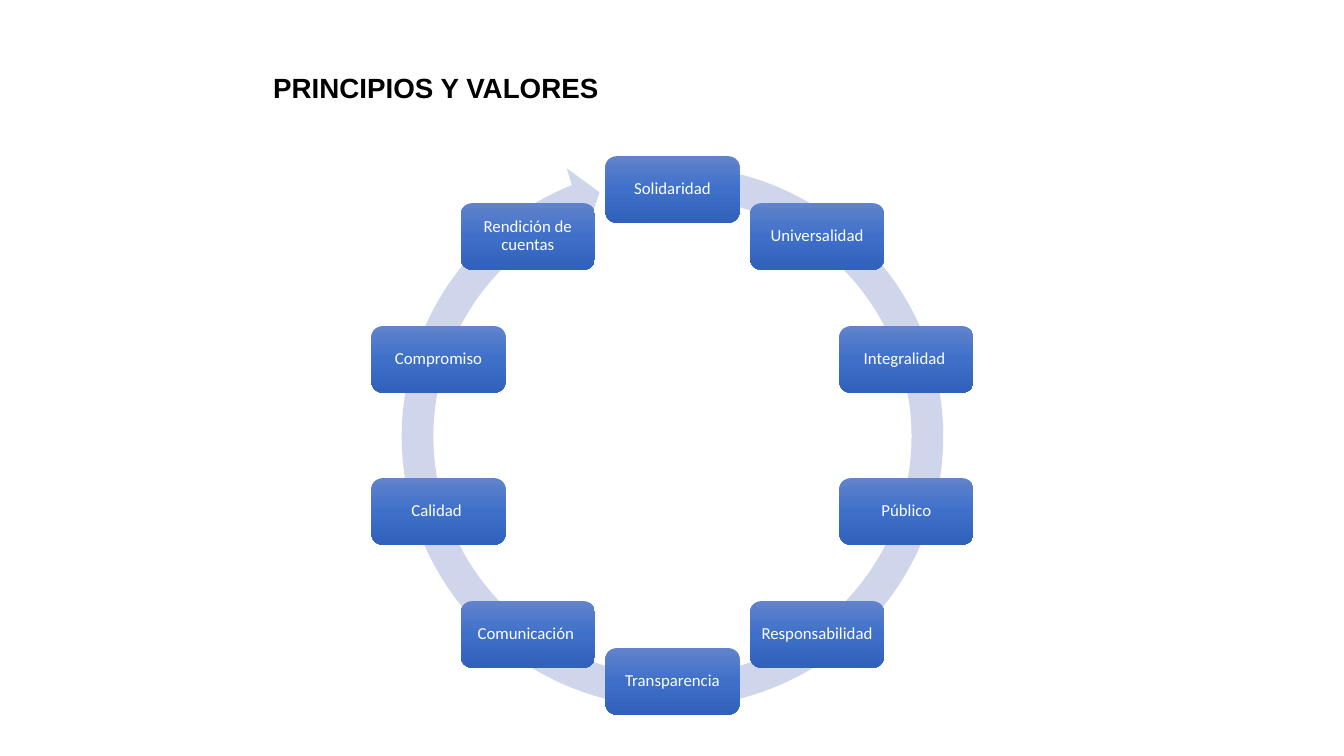
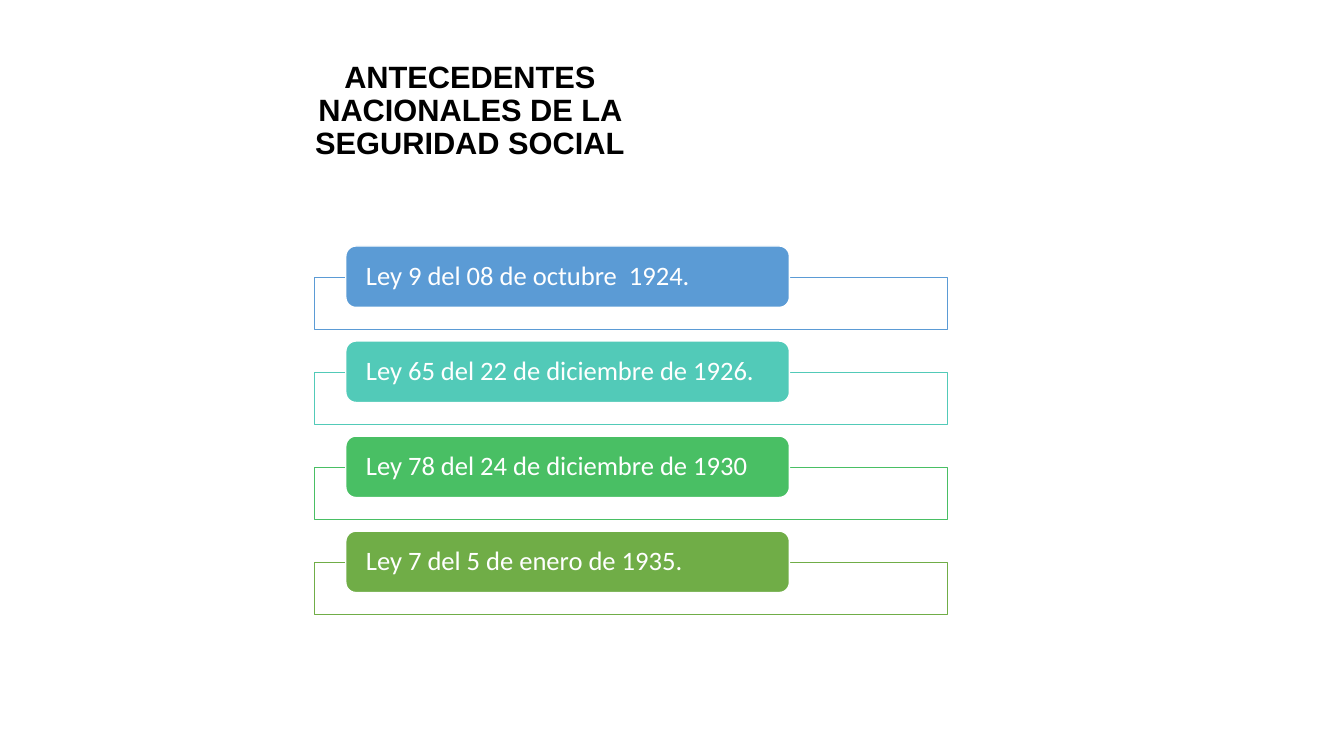
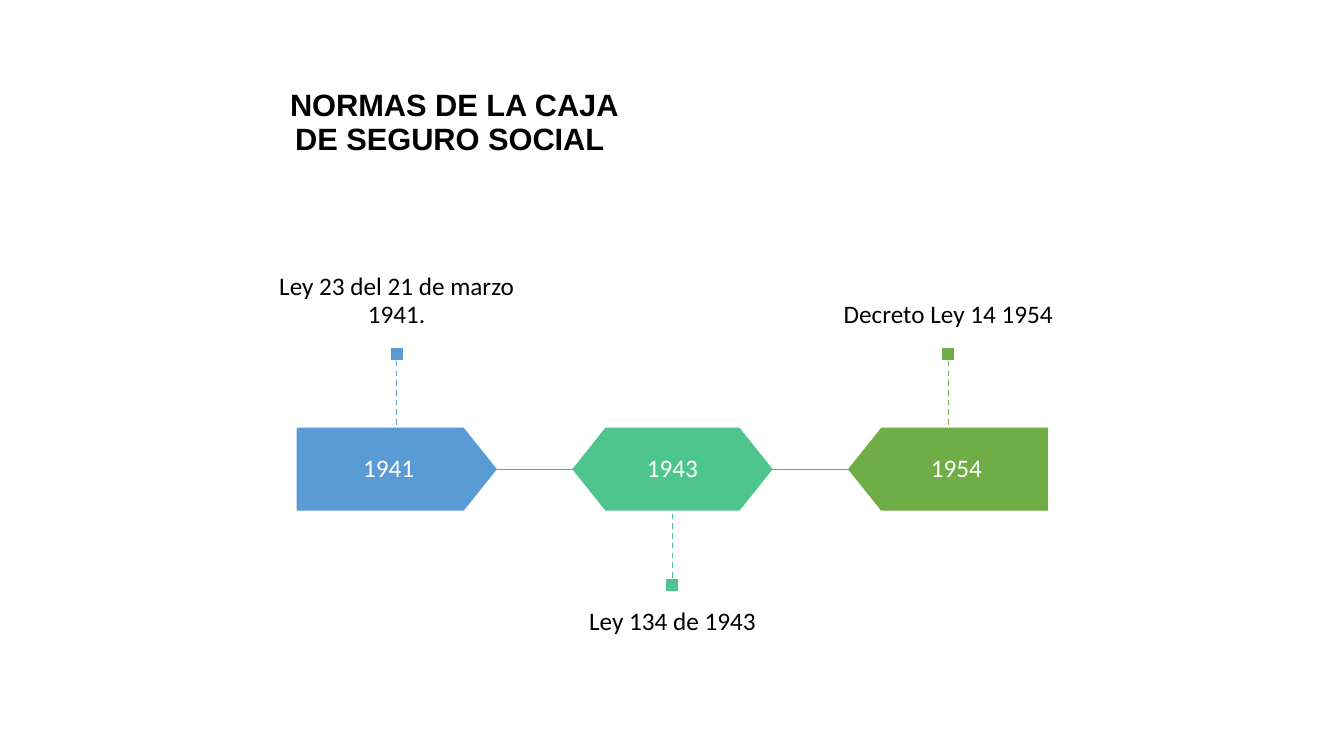
from math import cos, pi, sin

from lxml.etree import SubElement
from pptx import Presentation
from pptx.dml.color import RGBColor
from pptx.enum.dml import MSO_LINE
from pptx.enum.shapes import MSO_CONNECTOR, MSO_SHAPE
from pptx.enum.text import MSO_ANCHOR, MSO_AUTO_SIZE, PP_ALIGN
from pptx.oxml.ns import qn
from pptx.util import Inches, Pt


class Theme:
    title_font, body_font = "Arial", "Calibri"
    black, white = "000000", "FFFFFF"
    ring = "CFD5EA"
    node_gradient = {0: "6183CB", 50000: "3E70CA", 100000: "3062BB"}
    blue, teal, mint = "5B9BD5", "52CAB8", "4DC58D"
    green, olive = "49BF64", "70AD47"
    title_size, title_small = 22, 19.8
    node_size, law_size, event_size = 12, 19, 18
    line_spacing = 0.9


PRINCIPLES = [
    "Solidaridad", "Universalidad", "Integralidad ", "Público",
    "Responsabilidad", "Transparencia", "Comunicación ", "Calidad ",
    "Compromiso", "Rendición de cuentas",
]
LAWS = [
    ("Ley 9 del 08 de octubre  1924.", Theme.blue),
    ("Ley 65 del 22 de diciembre de 1926.", Theme.teal),
    ("Ley 78 del 24 de diciembre de 1930", Theme.green),
    ("Ley 7 del 5 de enero de 1935.", Theme.olive),
]
# year, law, colour, shape, law above the year, mirrored
EVENTS = [
    ("1941", "Ley 23 del 21 de marzo 1941.", Theme.blue,
     MSO_SHAPE.PENTAGON, True, False),
    ("1943", "Ley 134 de 1943", Theme.mint, MSO_SHAPE.HEXAGON, False, False),
    ("1954", "Decreto Ley 14 1954", Theme.olive,
     MSO_SHAPE.PENTAGON, True, True),
]


def set_all(target, values):
    for name, value in values.items():
        setattr(target, name, value)


def write(sp, text, size, color, font=Theme.body_font, bold=False,
          align=PP_ALIGN.CENTER, anchor=MSO_ANCHOR.MIDDLE,
          insets=(0.05, 0.05), space_after=0):
    """Fill a shape with one paragraph; insets are (sides, top and bottom)."""
    side, edge = map(Inches, insets)
    tf = sp.text_frame
    set_all(tf, {
        "text": text, "word_wrap": True, "auto_size": MSO_AUTO_SIZE.NONE,
        "vertical_anchor": anchor, "margin_left": side, "margin_right": side,
        "margin_top": edge, "margin_bottom": edge,
    })
    p = tf.paragraphs[0]
    set_all(p, {"alignment": align, "line_spacing": Theme.line_spacing,
                "space_before": Pt(0), "space_after": Pt(space_after)})
    r = p.runs[0]
    set_all(r.font, {"name": font, "size": Pt(size), "bold": bold})
    r.font.color.rgb = RGBColor.from_string(color)


def add_title_slide(prs, text, box, size=Theme.title_size, **style):
    s = prs.slides.add_slide(prs.slide_layouts[5])
    title = s.shapes.title
    set_all(title, dict(zip(("left", "top", "width", "height"),
                            map(Inches, box))))
    write(title, text, size, Theme.black, Theme.title_font, True,
          insets=(0.1, 0.05), **style)
    return s


def add_box(s, kind, box, fill, line=None, width=1):
    sp = s.shapes.add_shape(kind, *map(Inches, box))
    sp.shadow.inherit = False
    sp.fill.solid()
    sp.fill.fore_color.rgb = RGBColor.from_string(fill)
    if line:
        sp.line.color.rgb = RGBColor.from_string(line)
        sp.line.width = Pt(width)
    else:
        sp.line.fill.background()
    return sp


def shade(sp, stops):
    """Give a shape a top-to-bottom gradient."""
    sp.fill.gradient()
    sp.fill.gradient_angle = 270
    stop_list = sp._element.spPr.find(".//" + qn("a:gsLst"))
    for stop in list(stop_list):
        stop_list.remove(stop)
    for pos, color in stops.items():
        stop = SubElement(stop_list, qn("a:gs"), pos=str(pos))
        SubElement(stop, qn("a:srgbClr"), val=color)


def add_line(s, start, end, color, dash=None):
    line = s.shapes.add_connector(MSO_CONNECTOR.STRAIGHT,
                                  *map(Inches, (*start, *end)))
    line.line.color.rgb = RGBColor.from_string(color)
    line.line.width = Pt(1)
    if dash:
        line.line.dash_style = dash
    SubElement(line._element.spPr, qn("a:effectLst"))
    return line


def add_cycle(s, labels, center=(6.67, 4.32), radius=2.44):
    cx, cy = center
    w, h = 1.33, 0.66
    ring = add_box(s, MSO_SHAPE.CIRCULAR_ARROW, (3.81, 1.47, 5.72, 5.72),
                   Theme.ring)
    for i, value in enumerate((0.055, 3.307, 148.714, 167.491, 0.058)):
        ring.adjustments[i] = value
    for i, label in enumerate(labels):
        angle = 2 * pi * i / len(labels)
        x, y = cx + radius * sin(angle), cy - radius * cos(angle)
        node = add_box(s, MSO_SHAPE.ROUNDED_RECTANGLE,
                       (x - w / 2, y - h / 2, w, h), Theme.white)
        shade(node, Theme.node_gradient)
        write(node, label, Theme.node_size, Theme.white)


def add_law_list(s, laws, top=2.44, pitch=0.943):
    for i, (law, color) in enumerate(laws):
        y = top + i * pitch
        add_box(s, MSO_SHAPE.RECTANGLE, (3.12, y + 0.31, 6.28, 0.52),
                Theme.white, color)
        pill = add_box(s, MSO_SHAPE.ROUNDED_RECTANGLE, (3.43, y, 4.4, 0.61),
                       color, Theme.white)
        write(pill, law, Theme.law_size, Theme.white, align=PP_ALIGN.LEFT,
              insets=(0.17, 0))


def add_event(s, x, y, w, h, event):
    """Draw a year with its marker, dashed stem and law."""
    year, law, color, kind, above, mirrored = event
    cx, dot = x + w / 2, 0.14
    sp = add_box(s, kind, (x, y, w, h), color, color)
    sp.adjustments[0] = 0.4
    if mirrored:
        sp._element.spPr.find(qn("a:xfrm")).set("flipH", "1")
    write(sp, year, Theme.event_size, Theme.white, insets=(0.15, 0.15))

    if above:
        dot_y, stem_y, label_y, label_h = y - 0.81, y, y - 2.98, 2.16
        side, anchor = 2, MSO_ANCHOR.BOTTOM
    else:
        dot_y, stem_y, label_y, label_h = y + 1.48, y + h, y + 1.62, 1.6
        side, anchor = 0, MSO_ANCHOR.TOP
    marker = add_box(s, MSO_SHAPE.RECTANGLE, (cx - dot / 2, dot_y, dot, dot),
                     color, Theme.white, 1.5)
    stem = add_line(s, (cx, dot_y), (cx, stem_y), color, MSO_LINE.DASH)
    stem.begin_connect(marker, side)
    label = s.shapes.add_textbox(*map(Inches, (cx - 1.37, label_y,
                                               2.74, label_h)))
    write(label, law, Theme.event_size, Theme.black, anchor=anchor,
          insets=(0, 0.17))


def add_timeline(s, events, left=2.95, top=4.25, pitch=2.735):
    w, h = 1.97, 0.81
    for i, event in enumerate(events):
        add_event(s, left + i * pitch, top, w, h, event)
    for i, color in enumerate((Theme.blue, Theme.olive)):
        x, y = left + i * pitch, top + h / 2
        add_line(s, (x + w, y), (x + pitch, y), color)


def main():
    prs = Presentation()
    prs.slide_width, prs.slide_height = Inches(13.33), Inches(7.5)

    s = add_title_slide(prs, "PRINCIPIOS Y VALORES", (2.61, 0.69, 3.63, 0.47),
                        Theme.title_small, align=PP_ALIGN.LEFT,
                        anchor=MSO_ANCHOR.TOP)
    add_cycle(s, PRINCIPLES)

    s = add_title_slide(prs, "ANTECEDENTES NACIONALES DE LA SEGURIDAD SOCIAL",
                        (2.3, 0.52, 4.72, 1.17))
    add_law_list(s, LAWS)

    s = add_title_slide(prs, "NORMAS DE LA CAJA DE SEGURO SOCIAL ",
                        (2.69, 0.52, 3.62, 1.41), space_after=6)
    add_timeline(s, EVENTS)

    prs.save("out.pptx")


if __name__ == "__main__":
    main()
